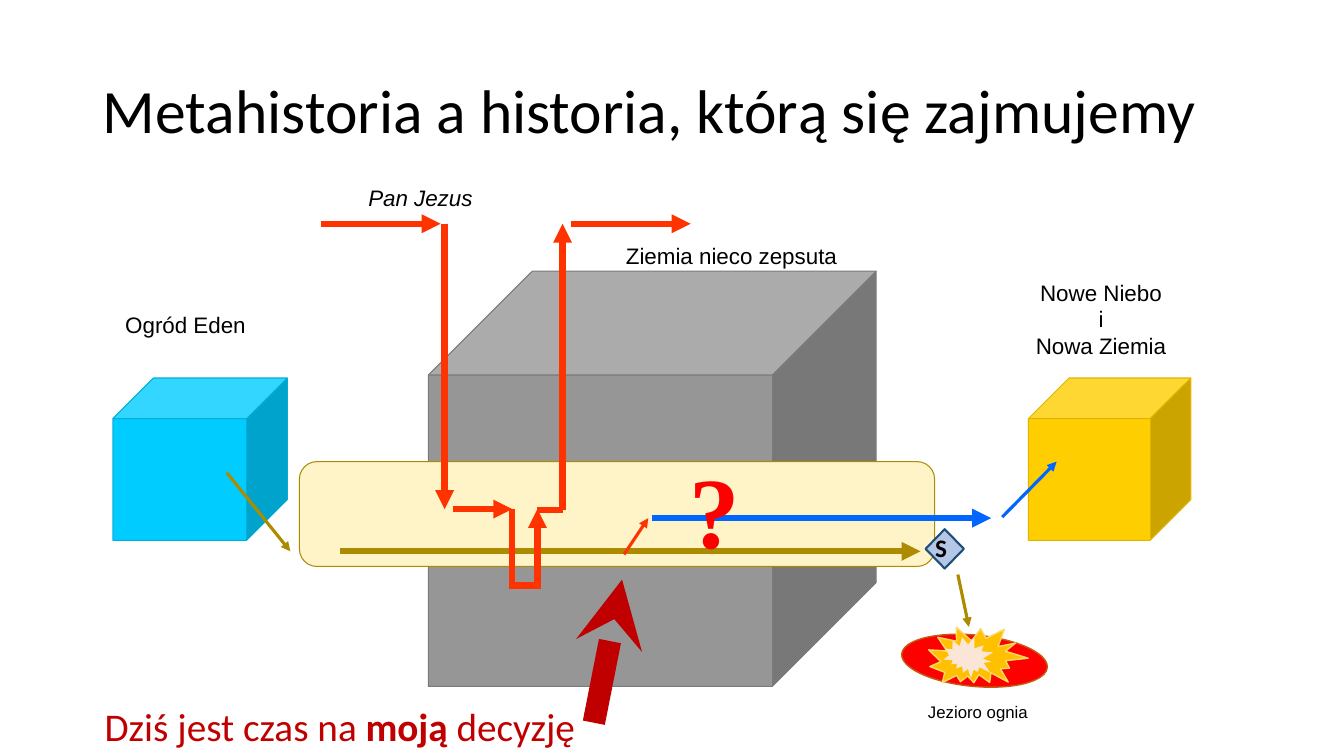
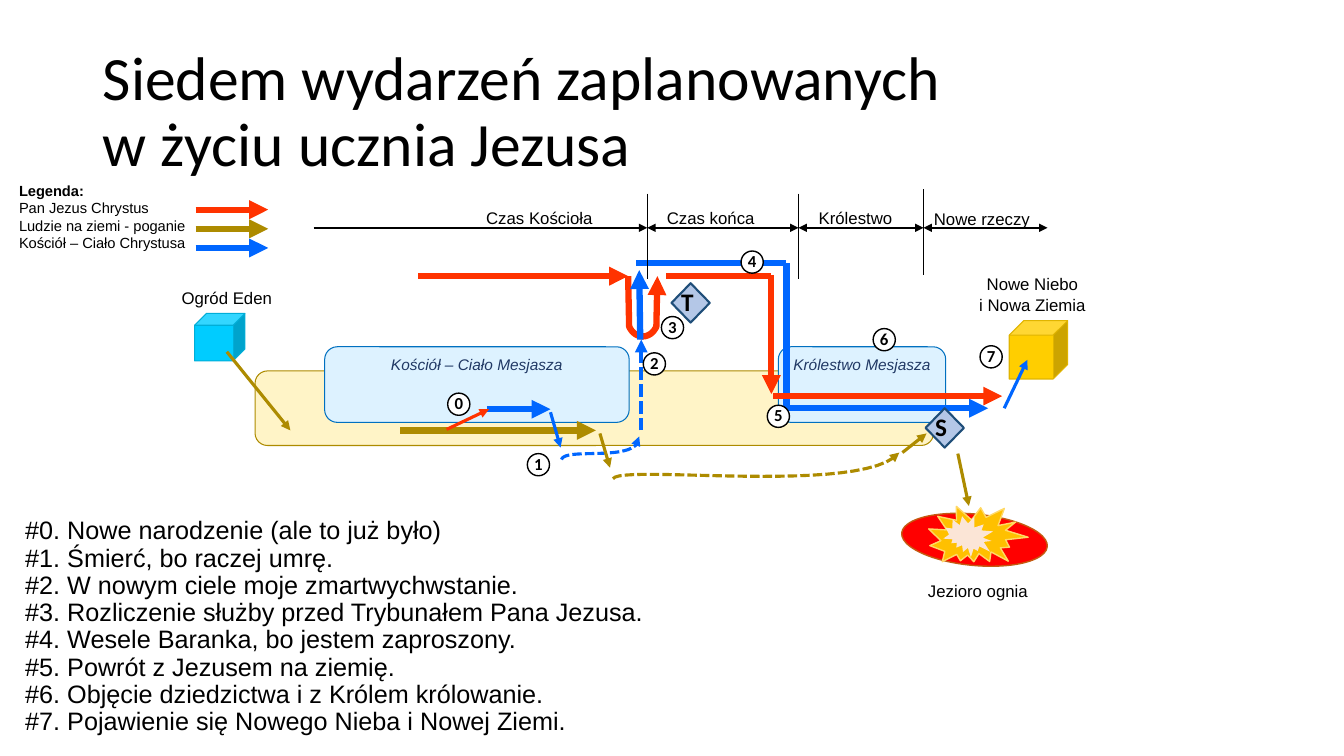
from pptx import Presentation
from pptx.dml.color import RGBColor
from pptx.enum.dml import MSO_LINE
from pptx.enum.shapes import MSO_CONNECTOR, MSO_SHAPE as SHAPE
from pptx.enum.text import MSO_ANCHOR as ANCHOR, MSO_AUTO_SIZE, PP_ALIGN as ALIGN
from pptx.oxml.ns import qn
from pptx.util import Pt
from lxml.etree import SubElement

PX = 9144  # 100 px to the inch
RED, GOLD, BLUE, BLACK = "FF3300", "AD8B00", "0066FF", "000000"
CRIMSON, NAVY = "C00000", "203864"
THICK, THIN, AXIS, HAIR = 4.5, 2.25, 1.5, 0.5
LABEL_INSET, TEXT_INSET = (3, 3), (10, 5)
CUBES = {"eden": ("00CCFF", "00AED8"), "heaven": ("FFCE00", "E0B400"),
         "earth": ("969696", "7A7A7A")}
BAND = ("FFF4C7", GOLD)
REALM = ("DDF2FF", "0070C0")

# Lines: x1, y1, x2, y2, colour, weight, ends, dashed
HISTORY_LINES = [
    (337, 547, 913, 547, GOLD, THICK),
    (647, 514, 983, 514, BLUE, THICK),
    (950, 570, 961, 622, GOLD, THIN),
    (994, 513, 1048, 458, BLUE, THIN),
    (225, 469, 288, 547, GOLD, THIN),
]
JESUS_LINES = [
    (558, 506, 558, 222, RED, THICK),
    (449, 505, 508, 505, RED, THICK),
    (508, 505, 508, 584, RED, THICK, ""),
    (508, 581, 533, 581, RED, THICK, ""),
    (533, 584, 533, 505, RED, THICK),
    (533, 506, 558, 506, RED, THICK, ""),
    (441, 222, 441, 505, RED, THICK),
    (566, 222, 685, 222, RED, THICK),
    (318, 222, 437, 222, RED, THICK),
    (619, 550, 643, 514, RED, THIN),
    (589, 717, 617, 575, CRIMSON, 16, "tail", False, "stealth"),
]
# Labels: lines, left, top, width, height, size, italic
HISTORY_LABELS = [
    (["Nowe Niebo", "i", "Nowa Ziemia"], 1020, 273, 144, 87, 16),
    (["Ogród Eden"], 112, 306, 144, 33, 16),
    (["Pan Jezus"], 345, 180, 144, 33, 16, True),
    (["Ziemia nieco zepsuta"], 611, 237, 229, 33, 16),
]
DECISION = [[("Dziś jest czas na ", False), ("moją", True), (" decyzję", False)]]

EVENT_LINES = [
    (397, 427, 591, 427, GOLD, THICK),
    (415, 274, 623, 274, RED, THICK),
    (483, 406, 546, 406, BLUE, THICK),
    (631, 261, 780, 261, BLUE, THICK, ""),
    (765, 273, 765, 391, RED, THICK),
    (661, 274, 765, 274, RED, THICK, ""),
    (780, 261, 780, 405, BLUE, THICK, ""),
    (767, 393, 994, 393, RED, THICK),
    (780, 405, 980, 405, BLUE, THICK),
    (635, 337, 634, 268, BLUE, THICK),
    (636, 427, 636, 337, BLUE, 3, "tail", True),
    (895, 449, 919, 430, GOLD, THIN),
    (595, 430, 605, 464, GOLD, THIN),
    (546, 409, 556, 444, BLUE, THIN),
    (950, 450, 961, 502, GOLD, THIN),
    (996, 405, 1019, 357, BLUE, THIN),
    (443, 426, 485, 406, RED, THIN),
    (225, 349, 288, 427, GOLD, THIN),
]
# Curves: start points, Bezier points, end points, colour, weight, dashed
EVENT_CURVES = [
    ([(623, 274)], [(624, 324), (630, 337), (645, 337), (651, 324)],
     [(652, 274)], RED, THICK, False),
    ([], [(557, 456), (560, 443), (635, 460), (634, 433)], [], BLUE, THIN, True),
    ([], [(608, 475), (615, 460), (857, 492), (892, 449)], [], GOLD, THIN, True),
]
ERA_EDGES = [311, 642, 792, 916, 1039]
ERA_Y = 226
ERA_LABELS = [
    (["Czas Kościoła"], 463, 203, 144, 26, 12),
    (["Czas końca"], 648, 203, 114, 26, 12),
    (["Królestwo"], 802, 203, 93, 26, 12),
    (["Nowe rzeczy"], 916, 204, 116, 26, 12),
]
PLACE_LABELS = [
    (["Ogród Eden"], 153, 282, 144, 26, 12),
    (["Nowe Niebo", "i Nowa Ziemia"], 952, 269, 144, 46, 12),
]
REALMS = [("Królestwo Mesjasza", 772, 344, 166, 75),
          ("Kościół – Ciało Mesjasza", 322, 344, 302, 75)]
EVENT_MARKS = [(444, 390), (523, 450), (638, 350), (656, 314),
               (735, 249), (761, 402), (866, 326), (972, 343)]
LEGEND_TITLE = "Legenda:"
LEGEND = [("Pan Jezus Chrystus", RED), ("Ludzie na ziemi - poganie", GOLD),
          ("Kościół – Ciało Chrystusa", BLUE)]
EVENTS = [
    "Nowe narodzenie (ale to już było)",
    "Śmierć, bo raczej umrę.",
    "W nowym ciele moje zmartwychwstanie.",
    "Rozliczenie służby przed Trybunałem Pana Jezusa.",
    "Wesele Baranka, bo jestem zaproszony.",
    "Powrót z Jezusem na ziemię.",
    "Objęcie dziedzictwa i z Królem królowanie.",
    "Pojawienie się Nowego Nieba i Nowej Ziemi.",
]


def px(*lengths):
    return [round(length * PX) for length in lengths]


def rgb(color):
    return RGBColor.from_string(color)


def add_run(para, text, size, color=BLACK, font="Arial", bold=False, italic=False):
    span = para.add_run()
    span.text = text
    span.font.size, span.font.name = Pt(size), font
    span.font.bold, span.font.italic = bold, italic
    span.font.color.rgb = rgb(color)


def write(box, lines, size, color=BLACK, font="Arial", bold=False, italic=False,
          align=ALIGN.LEFT, anchor=ANCHOR.TOP, inset=TEXT_INSET, wrap=True, spacing=1.0):
    """Fill a box with one paragraph a line; a line is a string or (text, bold) runs."""
    frame = box.text_frame
    frame.word_wrap, frame.auto_size = wrap, MSO_AUTO_SIZE.NONE
    frame.vertical_anchor = anchor
    frame.margin_left = frame.margin_right = inset[0] * PX
    frame.margin_top = frame.margin_bottom = inset[1] * PX
    for number, line in enumerate(lines):
        para = frame.add_paragraph() if number else frame.paragraphs[0]
        para.alignment, para.line_spacing = align, spacing
        para.space_before = Pt(0)
        for text, heavy in [(line, bold)] if isinstance(line, str) else line:
            add_run(para, text, size, color, font, heavy, italic)


def add_text(page, lines, left, top, width, height, size, **style):
    box = page.shapes.add_textbox(*px(left, top, width, height))
    write(box, lines, size, **style)


def add_label(page, lines, left, top, width, height, size, italic=False):
    add_text(page, lines, left, top, width, height, size, italic=italic,
             align=ALIGN.CENTER, anchor=ANCHOR.MIDDLE, inset=LABEL_INSET)


def add_figure(shapes, kind, at, fill, line=None, weight=0.75, turn=0):
    figure = shapes.add_shape(kind, *px(*at))
    figure.shadow.inherit = False
    figure.rotation = turn
    figure.fill.solid()
    figure.fill.fore_color.rgb = rgb(fill)
    if line:
        figure.line.color.rgb = rgb(line)
        figure.line.width = Pt(weight)
    else:
        figure.line.fill.background()
    return figure


def style_stroke(stroke, color, weight, ends="tail", dashed=False, tip="triangle"):
    """Colour a line and put a tip on each of the named ends."""
    stroke.line.color.rgb = rgb(color)
    stroke.line.width = Pt(weight)
    if dashed:
        stroke.line.dash_style = MSO_LINE.SQUARE_DOT
    properties = stroke.element.spPr
    outline = properties.find(qn("a:ln"))
    for end in ends.split():
        SubElement(outline, qn(f"a:{end}End")).set("type", tip)
    SubElement(properties, qn("a:effectLst"))


def add_line(page, x1, y1, x2, y2, *style):
    line = page.shapes.add_connector(MSO_CONNECTOR.STRAIGHT, *px(x1, y1, x2, y2))
    style_stroke(line, *style)


def bezier(points, steps=24):
    curve = []
    for step in range(steps + 1):
        t = step / steps
        shares = ((1 - t) ** 3, 3 * t * (1 - t) ** 2, 3 * t * t * (1 - t), t ** 3)
        curve.append(tuple(sum(share * point[axis] for share, point in zip(shares, points))
                           for axis in (0, 1)))
    return curve


def add_curve(page, start, bend, end, color, weight, dashed):
    points = [px(*point) for point in start + bezier(bend) + end]
    builder = page.shapes.build_freeform(*points[0])
    builder.add_line_segments(points[1:], close=False)
    curve = builder.convert_to_shape()
    curve.fill.background()
    style_stroke(curve, color, weight, "tail", dashed)


def add_cube(page, place, *at):
    add_figure(page.shapes, SHAPE.CUBE, at, *CUBES[place])


def add_band(page, *at):
    add_figure(page.shapes, SHAPE.ROUNDED_RECTANGLE, at, *BAND)


def add_judgement(page, letter, left, top):
    diamond = add_figure(page.shapes, SHAPE.DIAMOND, (left, top, 38, 39),
                         "B4C7E7", "1F4E79", 1.5)
    write(diamond, [letter], 18, font="Calibri", bold=True,
          anchor=ANCHOR.MIDDLE, inset=(0, 4), spacing=0.9)


def add_lake(page, top):
    """Lake of fire with its label."""
    shapes = page.shapes.add_group_shape().shapes
    add_figure(shapes, SHAPE.FLOWCHART_CONNECTOR, (894, top + 12, 145, 51),
               "FF0000", "C55A11", 1, 5.4)
    add_figure(shapes, SHAPE.EXPLOSION2, (921, top, 97, 68), "FFC000", "FFD966", 1, 16.2)
    add_figure(shapes, SHAPE.EXPLOSION2, (938, top + 12, 47, 45), "FBE5D6", turn=56.2)
    add_label(page, ["Jezioro ognia"], 898, top + 75, 144, 26, 12)


def add_page(deck, layout, title_lines):
    page = deck.slides.add_slide(deck.slide_layouts[layout])
    title = page.shapes.title
    title.left, title.top, title.width, title.height = px(92, 40, 1150, 145)
    write(title, [], 44, anchor=ANCHOR.MIDDLE)
    para = title.text_frame.paragraphs[0]
    para.alignment, para.line_spacing = ALIGN.LEFT, 0.9
    for number, line in enumerate(title_lines):
        if number:
            para.add_line_break()
        add_run(para, line, 44, font="Calibri")
    return page


def build_history(deck):
    page = add_page(deck, 5, ["Metahistoria a historia, którą się zajmujemy"])
    add_cube(page, "earth", 425, 269, 444, 412)
    add_band(page, 297, 458, 630, 104)
    add_cube(page, "heaven", 1020, 375, 161, 161)
    add_cube(page, "eden", 112, 375, 173, 161)
    for line in HISTORY_LINES:
        add_line(page, *line)
    add_judgement(page, "S", 918, 525)
    add_lake(page, 618)
    for label in HISTORY_LABELS:
        add_label(page, *label)
    add_text(page, ["?"], 674, 439, 73, 131, 72, color="FF0000",
             font="Times New Roman", bold=True)
    add_text(page, DECISION, 94, 692, 496, 57, 28, color=CRIMSON, font="Calibri")
    for line in JESUS_LINES:
        add_line(page, *line)


def add_timeline(page):
    for number, (start, end) in enumerate(zip(ERA_EDGES, ERA_EDGES[1:])):
        ends = "head tail" if number else "tail"
        add_line(page, start, ERA_Y, end, ERA_Y, BLACK, AXIS, ends)
    for edge, top in zip(ERA_EDGES[1:-1], (192, 192, 188)):
        add_line(page, edge, top, edge, top + 85, BLACK, HAIR, "")
    for label in ERA_LABELS:
        add_label(page, *label)


def add_legend(page):
    for number, (name, color) in enumerate(LEGEND):
        y = 208 + 19 * number
        add_line(page, 194, y, 266, y, color, THICK)
    lines = [[(LEGEND_TITLE, True)]] + [name for name, color in LEGEND]
    add_text(page, lines, 9, 175, 199, 81, 10.5)


def add_event_list(page):
    body = page.placeholders[1]
    body.left, body.top, body.width, body.height = px(15, 509, 862, 223)
    write(body, [f"#{number}. {event}" for number, event in enumerate(EVENTS)],
          18, spacing=0.9)
    for para in body.text_frame.paragraphs:
        properties = para._p.get_or_add_pPr()
        properties.set("marL", "0")
        properties.set("indent", "0")
        SubElement(properties, qn("a:buNone"))


def build_events(deck):
    page = add_page(deck, 1, ["Siedem wydarzeń zaplanowanych", "w życiu ucznia Jezusa"])
    add_event_list(page)
    add_band(page, 253, 368, 673, 74)
    for name, *at in REALMS:
        realm = add_figure(page.shapes, SHAPE.ROUNDED_RECTANGLE, at, *REALM)
        write(realm, [name], 11, color=NAVY, italic=True, align=ALIGN.CENTER, wrap=False)
    add_cube(page, "heaven", 1001, 318, 58, 58)
    add_cube(page, "eden", 193, 311, 50, 47)
    for curve in EVENT_CURVES:
        add_curve(page, *curve)
    for line in EVENT_LINES:
        add_line(page, *line)
    add_timeline(page)
    add_judgement(page, "T", 666, 281)
    add_judgement(page, "S", 918, 405)
    add_lake(page, 498)
    for number, (left, top) in enumerate(EVENT_MARKS):
        mark = add_figure(page.shapes, SHAPE.OVAL, (left, top, 22, 22), "FFFFFF", BLACK, 1)
        write(mark, [str(number)], 12, font="Calibri", bold=True, align=ALIGN.CENTER,
              anchor=ANCHOR.MIDDLE, inset=(0, 0), wrap=False, spacing=0.9)
    add_legend(page)
    for label in PLACE_LABELS:
        add_label(page, *label)


def main():
    deck = Presentation()
    deck.slide_width, deck.slide_height = px(1333, 750)
    build_history(deck)
    build_events(deck)
    deck.save("out.pptx")


if __name__ == "__main__":
    main()
